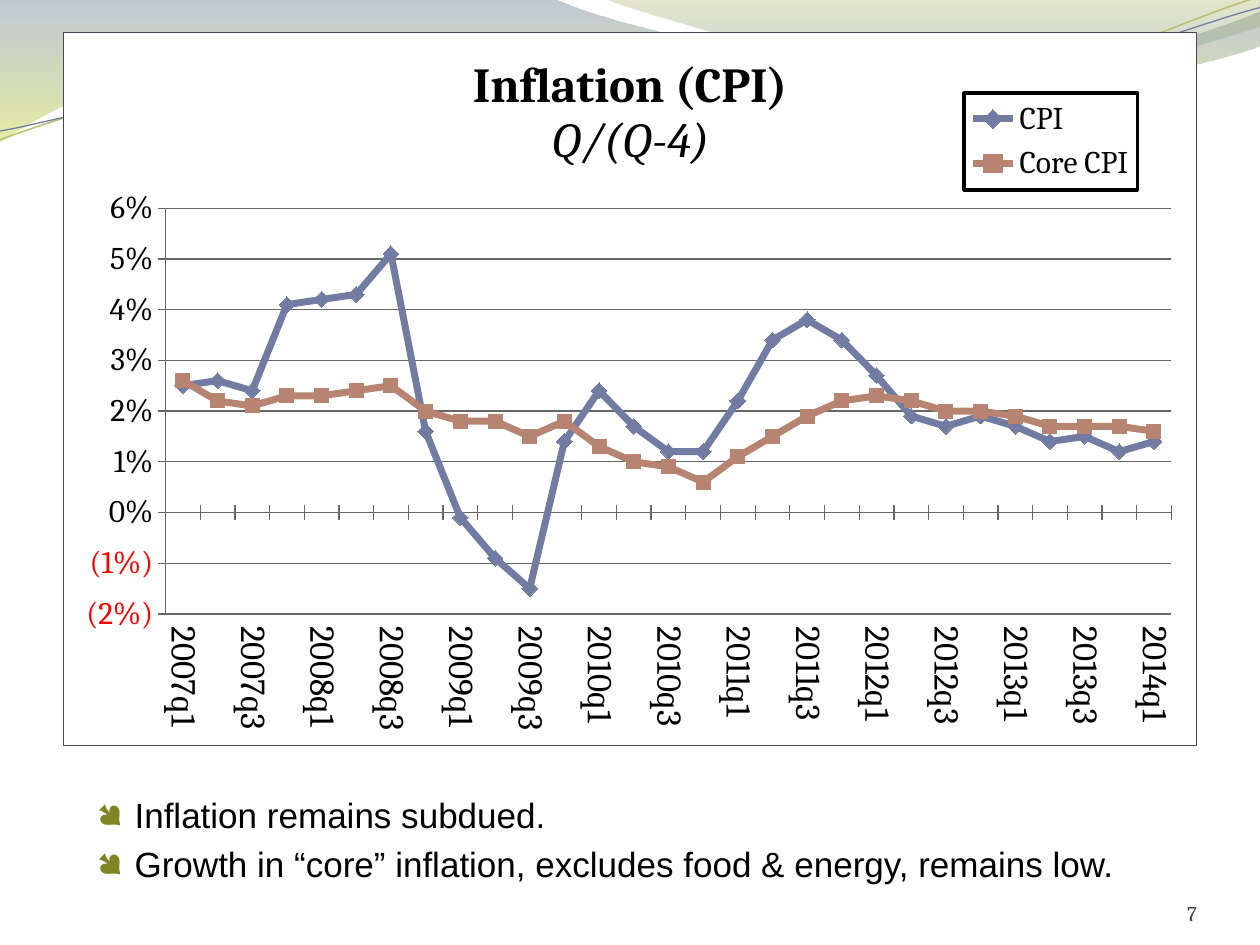
from dataclasses import dataclass
from math import cos, radians, sin

from lxml.etree import SubElement
from pptx import Presentation
from pptx.chart.data import CategoryChartData
from pptx.dml.color import RGBColor
from pptx.enum.chart import (XL_CHART_TYPE, XL_LEGEND_POSITION, XL_MARKER_STYLE,
                             XL_TICK_LABEL_POSITION, XL_TICK_MARK)
from pptx.enum.text import MSO_ANCHOR, PP_ALIGN
from pptx.oxml import parse_xml
from pptx.oxml.ns import nsdecls, qn
from pptx.util import Pt

PX = 9144  # EMU per px, 100 px to the inch


@dataclass(frozen=True)
class Theme:
    serif: str = "Cambria"
    sans: str = "Arial"
    black: str = "000000"
    white: str = "FFFFFF"
    slate: str = "464653"
    number: str = "43434F"
    grid: str = "666666"
    blue: str = "727CA3"
    clay: str = "B88472"
    lime: str = "B9C06C"
    bullet: str = "7D8525"
    title_size: int = 28
    body_size: int = 20
    chart_size: int = 18
    number_size: int = 12


def rgb(color):
    return RGBColor.from_string(color)


def style_font(font, name, size, color, bold=False, italic=False):
    font.name, font.size, font.bold, font.italic = name, Pt(size), bold, italic
    font.color.rgb = rgb(color)


def write_text(paragraph, text, align=None, before=None, **font_format):
    run = paragraph.add_run()
    run.text = text
    style_font(run.font, **font_format)
    if align is not None:
        paragraph.alignment = align
    if before is not None:
        paragraph.space_before = Pt(before)


def turn(point, center, degrees):
    angle = radians(degrees)
    dx, dy = point[0] - center[0], point[1] - center[1]
    return (center[0] + dx * cos(angle) - dy * sin(angle),
            center[1] + dx * sin(angle) + dy * cos(angle))


def place(parent, index, **fractions):
    """Give a chart part a manual layout in fractions of the chart."""
    for old in parent.findall(qn("c:layout")):
        parent.remove(old)
    layout = parse_xml(f"<c:layout {nsdecls('c')}><c:manualLayout/></c:layout>")
    settings = {"xMode": "edge", "yMode": "edge", **fractions}
    if parent.tag == qn("c:plotArea"):
        settings = {"layoutTarget": "inner", **settings}
    for key, value in settings.items():
        SubElement(layout[0], qn(f"c:{key}")).set("val", str(value))
    parent.insert(index, layout)


def frame(parent, fill, line, width):
    """Fill and border, put ahead of the text properties of a chart part."""
    parent.find(qn("c:txPr")).addprevious(parse_xml(
        f"<c:spPr {nsdecls('c', 'a')}>"
        f'<a:solidFill><a:srgbClr val="{fill}"/></a:solidFill>'
        f'<a:ln w="{Pt(width)}"><a:solidFill><a:srgbClr val="{line}"/></a:solidFill></a:ln>'
        "</c:spPr>"))


class SlideBuilder:
    def __init__(self, slide, theme):
        self.slide, self.theme = slide, theme

    def outline(self, start, segments, close):
        """Draw lines (x, y) and cubic curves (x1, y1, x2, y2, x, y)."""
        points = [start] + [segment[i:i + 2] for segment in segments
                            for i in range(0, len(segment), 2)]
        points = [(round(x * PX), round(y * PX)) for x, y in points]
        builder = self.slide.shapes.build_freeform(*points[0])
        shape = builder.add_line_segments(points[1:], close=close).convert_to_shape()
        shape.shadow.inherit = False
        # Gather the three points of each curve into one Bézier segment
        lines = iter(list(shape.element.spPr.iter(qn("a:lnTo"))))
        for segment in segments:
            knots = [next(lines) for _ in range(len(segment) // 2)]
            if len(knots) == 3:
                bezier = parse_xml(f"<a:cubicBezTo {nsdecls('a')}/>")
                knots[0].addprevious(bezier)
                for knot in knots:
                    bezier.append(knot[0])
                    knot.getparent().remove(knot)
        return shape

    def wave(self, start, segments, stops):
        shape = self.outline(start, segments, close=True)
        shape.line.fill.background()
        shape.fill.gradient()
        shape.fill.gradient_angle = 270
        for stop, (position, color, _) in zip(shape.fill.gradient_stops, stops):
            stop.position = position
            stop.color.rgb = rgb(color)
        colors = shape.element.spPr.iter(qn("a:srgbClr"))
        for color, (_, _, alpha) in zip(colors, stops):
            SubElement(color, qn("a:alpha")).set("val", str(alpha * 1000))

    def curve(self, start, segments, center, color, width, tilt=2.7):
        """An open curve, drawn level about its center and then tilted."""
        level = [sum((turn(segment[i:i + 2], center, tilt)
                      for i in range(0, len(segment), 2)), ()) for segment in segments]
        shape = self.outline(turn(start, center, tilt), level, close=False)
        shape.rotation = 360 - tilt
        shape.fill.background()
        shape.line.color.rgb = rgb(color)
        shape.line.width = Pt(width)

    def text_box(self, box):
        text = self.slide.shapes.add_textbox(*(n * PX for n in box)).text_frame
        text.word_wrap = True
        return text

    def page_number(self, box, number):
        text = self.text_box(box)
        text.margin_left = text.margin_right = text.margin_top = text.margin_bottom = 0
        text.vertical_anchor = MSO_ANCHOR.BOTTOM
        write_text(text.paragraphs[0], number, align=PP_ALIGN.RIGHT, name=self.theme.serif,
                   size=self.theme.number_size, color=self.theme.number)

    def bullets(self, box, lines):
        text = self.text_box(box)
        for index, line in enumerate(lines):
            paragraph = text.add_paragraph() if index else text.paragraphs[0]
            write_text(paragraph, line, before=4, name=self.theme.sans,
                       size=self.theme.body_size, color=self.theme.black)
            props = paragraph._p.get_or_add_pPr()
            props.set("marL", str(30 * PX))
            props.set("indent", str(-30 * PX))
            color = SubElement(props, qn("a:buClr"))
            SubElement(color, qn("a:srgbClr")).set("val", self.theme.bullet)
            SubElement(props, qn("a:buSzPct")).set("val", "95000")
            SubElement(props, qn("a:buFont")).set("typeface", "Wingdings")
            SubElement(props, qn("a:buChar")).set("char", "●")

    def line_chart(self, box, title, subtitle, categories, series):
        theme = self.theme
        data = CategoryChartData(number_format="0.0%")
        data.categories = categories
        for name, values, *_ in series:
            data.add_series(name, values)
        chart = self.slide.shapes.add_chart(
            XL_CHART_TYPE.LINE_MARKERS, *(n * PX for n in box), data).chart
        style_font(chart.font, theme.serif, theme.chart_size, theme.black)
        root = chart.element
        frame(root, theme.white, theme.slate, 0.75)
        root.find(qn("c:date1904")).addnext(
            parse_xml(f'<c:roundedCorners {nsdecls("c")} val="0"/>'))
        place(root.find(".//" + qn("c:plotArea")), 0, x=0.09, y=0.247, w=0.888, h=0.569)

        # Title
        heading = chart.chart_title.text_frame
        title_font = dict(name=theme.serif, size=theme.title_size, color=theme.black)
        write_text(heading.paragraphs[0], title, bold=True, **title_font)
        write_text(heading.add_paragraph(), subtitle, italic=True, **title_font)
        place(root.find(".//" + qn("c:title")), 1, x=0.358, y=0.029)

        # Legend
        chart.has_legend = True
        legend = chart.legend
        legend.position = XL_LEGEND_POSITION.RIGHT
        legend.include_in_layout = True
        style_font(legend.font, theme.serif, theme.chart_size, theme.black)
        legend_part = root.find(".//" + qn("c:legend"))
        frame(legend_part, theme.white, theme.black, 2)
        place(legend_part, 1, x=0.795, y=0.085, w=0.153, h=0.136)

        # Axes
        quarters, rates = chart.category_axis, chart.value_axis
        for axis, size in ((quarters, theme.body_size), (rates, theme.chart_size)):
            axis.major_tick_mark = XL_TICK_MARK.CROSS
            axis.format.line.color.rgb = rgb(theme.grid)
            style_font(axis.tick_labels.font, theme.serif, size, theme.black)
        quarters.tick_label_position = XL_TICK_LABEL_POSITION.LOW
        quarter_axis = root.find(".//" + qn("c:catAx"))
        quarter_axis.find(qn("c:txPr")).find(qn("a:bodyPr")).set("rot", "5400000")
        quarter_axis.find(qn("c:noMultiLvlLbl")).addprevious(
            parse_xml(f'<c:tickLblSkip {nsdecls("c")} val="2"/>'))
        rates.major_gridlines.format.line.color.rgb = rgb(theme.grid)
        rates.tick_labels.number_format = r"0%;[Red]\(0%\)"
        rates.tick_labels.number_format_is_linked = False

        # Series
        for plotted, (_, _, color, marker, size) in zip(chart.plots[0].series, series):
            plotted.smooth = False
            plotted.format.line.color.rgb = rgb(color)
            plotted.format.line.width = Pt(4)
            plotted.marker.style, plotted.marker.size = marker, size
            plotted.marker.format.fill.solid()
            plotted.marker.format.fill.fore_color.rgb = rgb(color)
            plotted.marker.format.line.color.rgb = rgb(color)
        chart.plots[0].vary_by_categories = False


def main():
    theme = Theme()
    deck = Presentation()
    deck.slide_width, deck.slide_height = 1000 * PX, 750 * PX
    page = SlideBuilder(deck.slides.add_slide(deck.slide_layouts[6]), theme)

    # Waves and thin curves along the top
    page.wave((0, 0), [(440, -1), (476, 17, 664, 63, 758, 63), (853, 63, 958, 26, 1000, 9),
                       (1001, 36), (983, 44, 870, 76, 746, 75), (622, 75, 382, 28, 257, 34),
                       (129, 36, 46, 83, -1, 113)],
              [(0, "72889B", 45), (1, "D3DE57", 55)])
    page.wave((479, -1), [(509, 11, 682, 62, 769, 65), (856, 69, 961, 32, 1000, 21), (1000, 0)],
              [(0, "A4AC50", 30), (0.8, "84A3BD", 45)])
    page.curve((0, 111), [(48, 93, 158, 57, 277, 52), (395, 47, 593, 89, 713, 80),
                          (833, 71, 938, 15, 998, -2)], (499, 57.5), theme.lime, 0.85)
    page.curve((0, 104), [(47, 96, 164, 61, 283, 56), (403, 51, 597, 84, 717, 75),
                          (836, 67, 941, 21, 1000, 6)], (499.5, 59), theme.blue, 0.75)

    page.page_number((867, 695, 83, 40), "7")

    # Inflation by quarter
    cpi = (0.025, 0.026, 0.024, 0.041, 0.042, 0.043, 0.051, 0.016, -0.001, -0.009,
           -0.015, 0.014, 0.024, 0.017, 0.012, 0.012, 0.022, 0.034, 0.038, 0.034,
           0.027, 0.019, 0.017, 0.019, 0.017, 0.014, 0.015, 0.012, 0.014)
    core_cpi = (0.026, 0.022, 0.021, 0.023, 0.023, 0.024, 0.025, 0.02, 0.018, 0.018,
                0.015, 0.018, 0.013, 0.01, 0.009, 0.006, 0.011, 0.015, 0.019, 0.022,
                0.023, 0.022, 0.02, 0.02, 0.019, 0.017, 0.017, 0.017, 0.016)
    quarters = [f"{2007 + i // 4}q{i % 4 + 1}" for i in range(len(cpi))]
    page.line_chart((50, 25, 900, 567), "Inflation (CPI)", "Q/(Q-4)", quarters,
                    [("CPI", cpi, theme.blue, XL_MARKER_STYLE.DIAMOND, 9),
                     ("Core CPI", core_cpi, theme.clay, XL_MARKER_STYLE.SQUARE, 8)])

    # Takeaways
    page.bullets((67, 625, 893, 108), [
        "Inflation remains subdued.",
        "Growth in “core” inflation, excludes food & energy, remains low."])

    deck.save("out.pptx")


if __name__ == "__main__":
    main()
